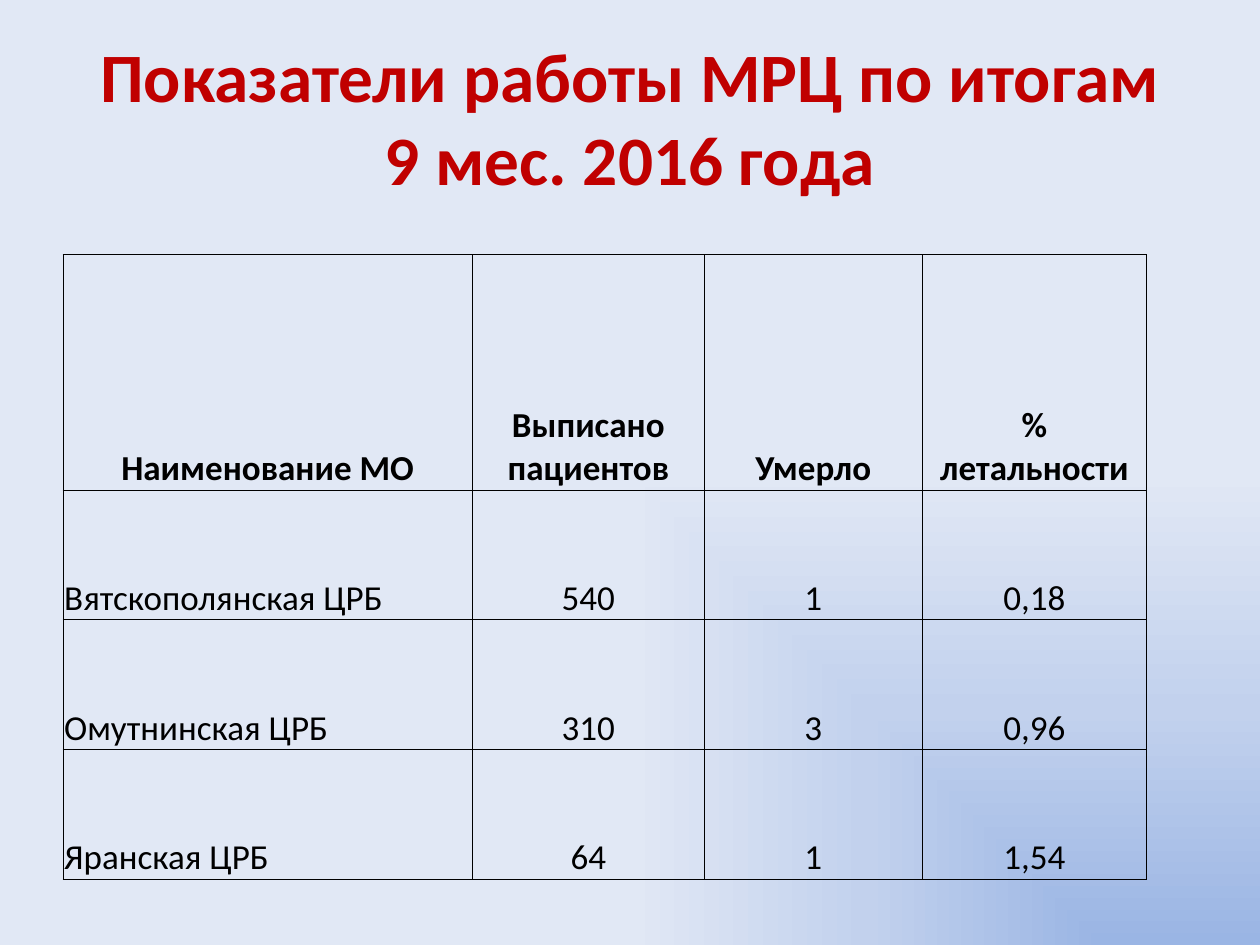
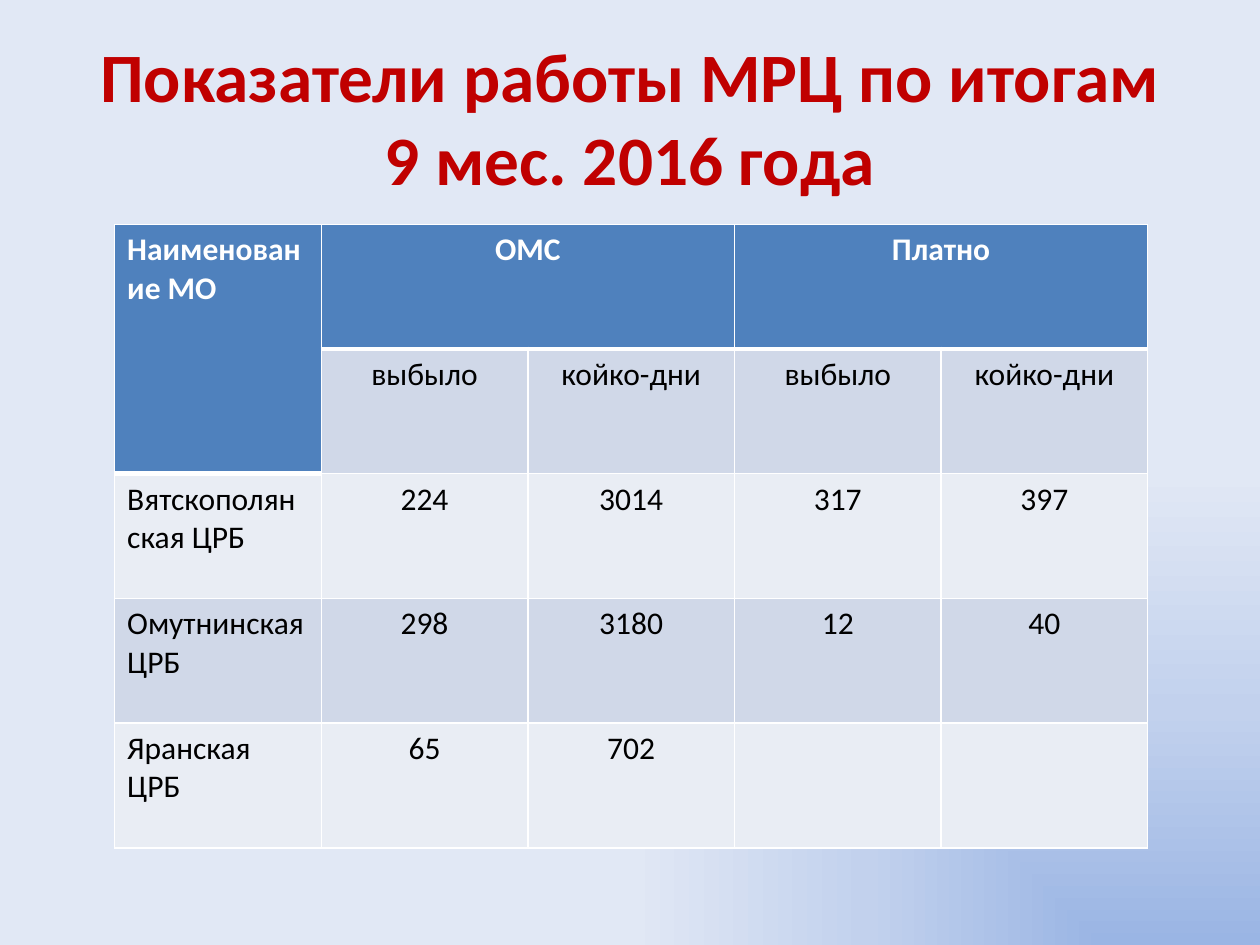
from pptx import Presentation
from pptx.dml.color import RGBColor
from pptx.enum.text import MSO_ANCHOR, MSO_AUTO_SIZE, PP_ALIGN
from pptx.oxml import parse_xml
from pptx.oxml.ns import nsdecls, qn
from pptx.util import Inches, Pt

FONT = "Calibri"
RED = RGBColor(0xC0, 0x00, 0x00)
BLACK = RGBColor(0x00, 0x00, 0x00)
WHITE = RGBColor(0xFF, 0xFF, 0xFF)
BLUE = RGBColor(0x4F, 0x81, 0xBD)
DARK = RGBColor(0xD0, 0xD8, 0xE8)
LIGHT = RGBColor(0xE9, 0xED, 0xF4)
STOPS = [(0, RGBColor(0x9A, 0xB5, 0xE4)),
         (50, RGBColor(0xC2, 0xD1, 0xED)),
         (100, RGBColor(0xE1, 0xE8, 0xF5))]
TITLE = "Показатели работы МРЦ по итогам 9 мес. 2016 года"


def write(frame, text, size=18, color=BLACK, bold=False, align=PP_ALIGN.CENTER):
    par = frame.paragraphs[0]
    par.alignment = align
    run = par.add_run()
    run.text = text
    run.font.name = FONT
    run.font.size = Pt(size)
    run.font.color.rgb = color
    run.font.bold = bold


def edge(cell, color, **widths):
    """Draw the cell borders; widths are in points, by side L, R, T, B."""
    props = cell._tc.get_or_add_tcPr()
    for pos, side in enumerate("LRTB"):
        line = parse_xml(
            f'<a:ln{side} {nsdecls("a")} w="{Pt(widths[side])}"><a:solidFill>'
            f'<a:srgbClr val="{color}"/></a:solidFill></a:ln{side}>')
        props.insert(pos, line)


deck = Presentation()
deck.slide_width, deck.slide_height = Inches(10), Inches(7.5)

# Shared background: gradient that starts in the lower right corner
master = deck.slide_master
master.background.fill.solid()
back = master.element.find(".//" + qn("p:bgPr"))
stops = "".join(f'<a:gs pos="{pos * 1000}"><a:srgbClr val="{color}"/></a:gs>'
                for pos, color in STOPS)
back.replace(back[0], parse_xml(
    f'<a:gradFill {nsdecls("a")} rotWithShape="1"><a:gsLst>{stops}</a:gsLst>'
    '<a:path path="rect"><a:fillToRect l="100000" t="100000"/></a:path>'
    '</a:gradFill>'))

# Both slides: title and empty table
DEATHS = [
    ["Наименование МО", "Выписано пациентов", "Умерло", "% летальности"],
    ["Вятскополянская ЦРБ", "540", "1", "0,18"],
    ["Омутнинская ЦРБ", "310", "3", "0,96"],
    ["Яранская ЦРБ", "64", "1", "1,54"],
]
STAYS = [
    ["Наименование МО", "ОМС", "", "Платно", ""],
    ["", "выбыло", "койко-дни", "выбыло", "койко-дни"],
    ["Вятскополянская ЦРБ", "224", "3014", "317", "397"],
    ["Омутнинская ЦРБ", "298", "3180", "12", "40"],
    ["Яранская ЦРБ", "65", "702", "", ""],
]
plans = [
    (DEATHS, 0.5, 2.02, [3.25, 1.84, 1.73, 1.78], [1.87] + [1.03] * 3),
    (STAYS, 0.91, 1.78, [1.64] * 5, [0.99] * 5),
]
tables = []
for data, left, top, cols, rows in plans:
    slide = deck.slides.add_slide(deck.slide_layouts[5])
    title = slide.shapes.title
    title.left, title.top = Inches(0.5), Inches(0.3)
    title.width, title.height = Inches(9), Inches(1.25)
    frame = title.text_frame
    frame.auto_size = MSO_AUTO_SIZE.NONE
    frame.vertical_anchor = MSO_ANCHOR.MIDDLE
    write(frame, TITLE, size=39.6, color=RED, bold=True)

    table = slide.shapes.add_table(
        len(rows), len(cols), Inches(left), Inches(top),
        Inches(sum(cols)), Inches(sum(rows))).table
    table.first_row = table.horz_banding = False
    for col, width in zip(table.columns, cols):
        col.width = Inches(width)
    for row, height in zip(table.rows, rows):
        row.height = Inches(height)
    tables.append(table)
deaths, stays = tables

# Slide 1: plain grid with text at the foot of each cell
for r, row in enumerate(DEATHS):
    for c, text in enumerate(row):
        cell = deaths.cell(r, c)
        cell.fill.background()
        cell.vertical_anchor = MSO_ANCHOR.BOTTOM
        cell.margin_left = cell.margin_right = cell.margin_top = Inches(0.01)
        cell.margin_bottom = 0
        name = r > 0 and c == 0
        write(cell.text_frame, text, size=20, bold=r == 0,
              align=PP_ALIGN.LEFT if name else PP_ALIGN.CENTER)
        edge(cell, BLACK, L=0.5, R=0.5, T=0.5, B=0.5)

# Slide 2: banded rows under a two-level header
for start, end in [((0, 0), (1, 0)), ((0, 1), (0, 2)), ((0, 3), (0, 4))]:
    stays.cell(*start).merge(stays.cell(*end))
for r, row in enumerate(STAYS):
    for c, text in enumerate(row):
        cell = stays.cell(r, c)
        last = 1 if c == 0 else 0
        head = r <= last
        cell.fill.solid()
        cell.fill.fore_color.rgb = BLUE if head else DARK if r % 2 else LIGHT
        if text:
            write(cell.text_frame, text, color=WHITE if head else BLACK,
                  bold=head, align=PP_ALIGN.CENTER if c else PP_ALIGN.LEFT)
        edge(cell, WHITE, L=1, R=1, T=3 if r == last + 1 else 1,
             B=3 if head else 1)

deck.save("out.pptx")
